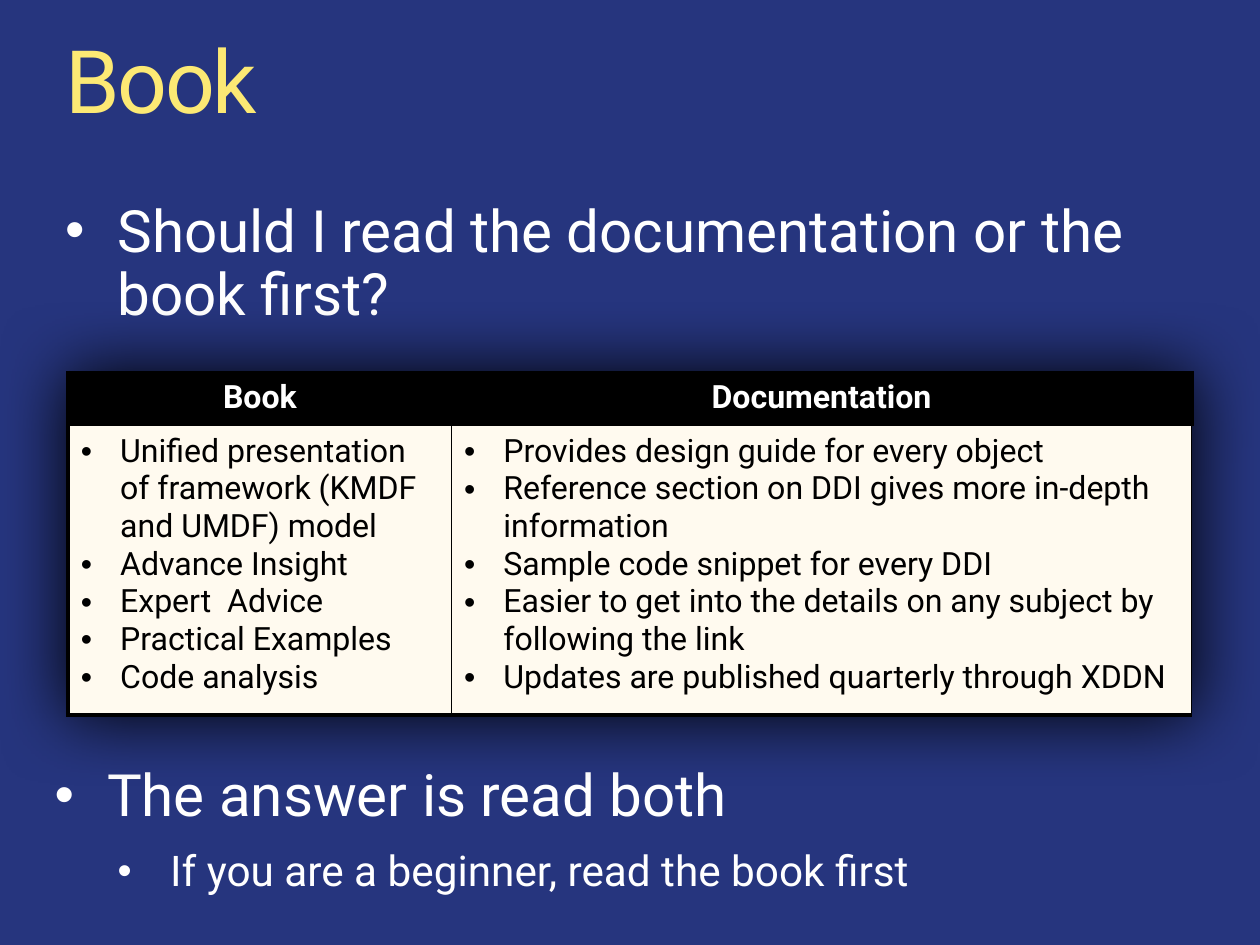
from dataclasses import dataclass

from lxml.etree import SubElement
from pptx import Presentation
from pptx.dml.color import RGBColor
from pptx.enum.text import PP_ALIGN
from pptx.oxml.ns import qn
from pptx.util import Pt


@dataclass(frozen=True)
class Theme:
    font: str = "Roboto"
    back: str = "26357E"
    gold: str = "FCE974"
    white: str = "FFFFFF"
    black: str = "000000"
    cream: str = "FFFAEF"
    title: float = 60
    body: float = 40
    sub: float = 29
    cell: float = 22


@dataclass(frozen=True)
class Line:
    text: str
    size: float
    color: str
    bold: bool = False
    left: float = 0
    hang: float = 0
    level: int = 0
    space: float | None = None
    before: float = 0
    center: bool = False


@dataclass(frozen=True)
class Box:
    left: float
    top: float
    width: float
    height: float
    pad: tuple[float, float]
    lines: list[Line]


@dataclass(frozen=True)
class Column:
    width: float
    head: str
    items: list[str]
    edges: dict[str, float]
    top: dict[str, float]


THEME = Theme()
PAD = (8.64, 4.32)


def point(text: str, size: float, left: float = 36, level: int = 0, before: float = 0) -> Line:
    return Line(text, size, THEME.white, left=left, hang=36, level=level, space=0.9, before=before)


BOXES = [
    Box(36, 21.6, 792, 65.5, PAD, [Line("Book", THEME.title, THEME.gold, space=0.9)]),
    Box(36, 134, 792, 144.7, PAD,
        [point("Should I read the documentation or the book first?", THEME.body)]),
    Box(37.5, 525.6, 792, 89.3, (0, 0), [
        point("The answer is read both", THEME.body),
        point("If you are a beginner, read the book first", THEME.sub, 79.2, 1, 14),
    ]),
]

COLUMNS = [
    Column(262.8, "Book", [
        "Unified presentation of framework (KMDF and UMDF) model",
        "Advance Insight",
        "Expert  Advice",
        "Practical Examples",
        "Code analysis",
    ], {"L": 3, "R": 1, "B": 3}, {"L": 3, "T": 3}),
    Column(507.6, "Documentation", [
        "Provides design guide for every object",
        "Reference section on DDI gives more in-depth information",
        "Sample code snippet for every DDI",
        "Easier to get into the details on any subject by following the link",
        "Updates are published quarterly through XDDN",
    ], {"L": 1, "R": 1, "B": 3}, {"T": 3, "R": 3}),
]


def write(frame, lines: list[Line]) -> None:
    for at, line in enumerate(lines):
        para = frame.add_paragraph() if at else frame.paragraphs[0]
        para.text = line.text
        para.level = line.level
        para.alignment = PP_ALIGN.CENTER if line.center else PP_ALIGN.LEFT
        if line.space:
            para.line_spacing = line.space
        if line.before:
            para.space_before = Pt(line.before)
        props = para._p.get_or_add_pPr()
        props.set("marL", str(Pt(line.left)))
        props.set("indent", str(Pt(-line.hang)))
        if line.hang:
            if line.space:
                SubElement(props, qn("a:buSzPct"), val="95000")
            SubElement(props, qn("a:buFont"), typeface="Arial")
            SubElement(props, qn("a:buChar"), char="•")
        else:
            SubElement(props, qn("a:buNone"))
        font = para.font
        font.name = THEME.font
        font.size = Pt(line.size)
        font.bold = line.bold
        font.color.rgb = RGBColor.from_string(line.color)
        if line.size == THEME.title:
            para.runs[0]._r.get_or_add_rPr().set("spc", "-150")


def inset(item, pad: tuple[float, float]) -> None:
    item.margin_left = item.margin_right = Pt(pad[0])
    item.margin_top = item.margin_bottom = Pt(pad[1])


def add_box(slide, box: Box) -> None:
    shape = slide.shapes.add_textbox(Pt(box.left), Pt(box.top), Pt(box.width), Pt(box.height))
    frame = shape.text_frame
    frame.word_wrap = True
    inset(frame, box.pad)
    write(frame, box.lines)


def paint(node, color: str) -> None:
    SubElement(SubElement(node, qn("a:solidFill")), qn("a:srgbClr"), val=color)


def fill_cell(cell, lines: list[Line], color: str, edges: dict[str, float]) -> None:
    inset(cell, PAD)
    write(cell.text_frame, lines)
    props = cell._tc.get_or_add_tcPr()
    for side in "LRTB":
        if side in edges:
            paint(SubElement(props, qn(f"a:ln{side}"), w=str(Pt(edges[side]))), THEME.black)
    cell.fill.solid()
    cell.fill.fore_color.rgb = RGBColor.from_string(color)


def add_grid(slide, cols: list[Column]) -> None:
    wide = sum(col.width for col in cols)
    rows = (36.72, 198)
    frame = slide.shapes.add_table(2, len(cols), Pt(46.8), Pt(255.6), Pt(wide), Pt(sum(rows)))
    table = frame.table
    table.first_row = table.horz_banding = False
    props = table._tbl.tblPr
    style = props.find(qn("a:tableStyleId"))
    style.text = "{2D5ABB26-0587-4C30-8999-92F81FD0307C}"
    glow = SubElement(props, qn("a:effectLst"))
    style.addprevious(glow)
    shade = SubElement(glow, qn("a:outerShdw"), blurRad=str(Pt(50)), dist="0", dir="0")
    SubElement(shade, qn("a:srgbClr"), val=THEME.black)
    for row, high in zip(table.rows, rows):
        row.height = Pt(high)
    for at, col in enumerate(cols):
        table.columns[at].width = Pt(col.width)
        head = Line(col.head, THEME.cell, THEME.white, bold=True, center=True)
        items = [Line(text, THEME.cell, THEME.black, left=27, hang=27) for text in col.items]
        fill_cell(table.cell(0, at), [head], THEME.black, col.top)
        fill_cell(table.cell(1, at), items, THEME.cream, col.edges)


def main() -> None:
    deck = Presentation()
    deck.slide_width, deck.slide_height = Pt(864), Pt(648)
    slide = deck.slides.add_slide(deck.slide_layouts[6])
    slide.background.fill.solid()
    slide.background.fill.fore_color.rgb = RGBColor.from_string(THEME.back)
    for box in BOXES:
        add_box(slide, box)
    add_grid(slide, COLUMNS)
    deck.save("out.pptx")


if __name__ == "__main__":
    main()
